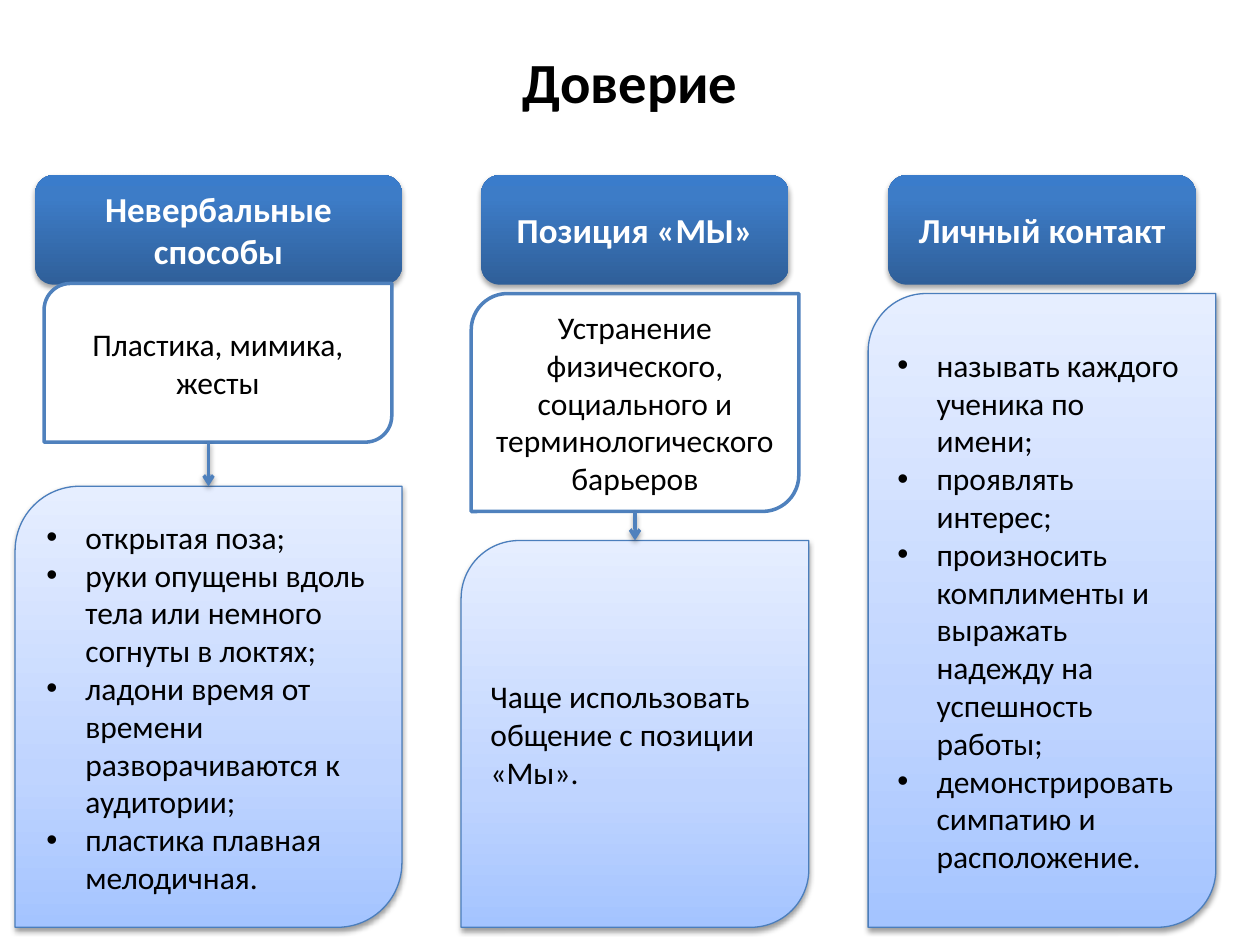
from dataclasses import dataclass

from lxml import etree
from pptx import Presentation
from pptx.dml.color import RGBColor
from pptx.enum import shapes, text
from pptx.oxml import ns
from pptx.util import Inches, Pt


@dataclass(frozen=True)
class Theme:
    font: str = "Calibri"
    title_size: float = 32.4
    header_size: float = 20
    body_size: float = 18
    ink: str = "000000"
    paper: str = "FFFFFF"
    accent: str = "4F81BD"
    panel_line: str = "4B7EBC"
    header_fill: tuple = ((0, "2F5F99"), (80, "3D7CC7"), (100, "3A7CCB"))
    panel_fill: tuple = ((0, "A4C4FF"), (35, "BFD4FF"), (100, "E6EEFF"))
    # Opacity in percent, then distance in points
    header_shadow: tuple = (35, 1.8)
    panel_shadow: tuple = (38, 1.6)


THEME = Theme()
HEADER_TOP, HEADER_HEIGHT = 1.39, 0.87
PANEL_BOTTOM = 7.36
BULLET_INDENT = 0.31

COLUMNS = [
    {
        "header": ("Невербальные способы", 0.28, 2.91),
        "summary": ("Пластика, мимика, жесты", (0.35, 2.25, 2.76, 1.26)),
        "details": [
            "открытая поза;",
            "руки опущены вдоль тела или немного согнуты в локтях;",
            "ладони время от времени разворачиваются к аудитории;",
            "пластика плавная мелодичная.",
        ],
        "panel": (0.12, 3.86, 3.07),
    },
    {
        "header": ("Позиция «МЫ»", 3.82, 2.44),
        "summary": (
            "Устранение физического, социального и терминологического барьеров",
            (3.74, 2.33, 2.6, 1.73),
        ),
        "details": ["Чаще использовать общение с позиции «Мы»."],
        "panel": (3.66, 4.29, 2.76),
    },
    {
        "header": ("Личный контакт", 7.05, 2.44),
        "details": [
            "называть каждого ученика по имени;",
            "проявлять интерес;",
            "произносить комплименты и выражать надежду на успешность работы;",
            "демонстрировать симпатию и расположение.",
        ],
        "panel": (6.89, 2.33, 2.76),
    },
]


def inches(box):
    return [Inches(length) for length in box]


def add_xml(parent, tag, **attributes):
    return etree.SubElement(parent, ns.qn(tag), attributes)


def add_shadow(effects, opacity, distance):
    shadow = add_xml(effects, "a:outerShdw", blurRad=str(Pt(3.1)), dist=str(Pt(distance)),
                     dir="5400000", rotWithShape="0")
    color = add_xml(shadow, "a:srgbClr", val=THEME.ink)
    add_xml(color, "a:alpha", val=str(opacity * 1000))


def set_gradient(fill, owner, stops):
    fill.gradient()
    fill.gradient_angle = 90
    stop_list = owner._element.spPr.find(".//" + ns.qn("a:gsLst"))
    for stop in list(stop_list):
        stop_list.remove(stop)
    for position, color in stops:
        stop = add_xml(stop_list, "a:gs", pos=str(position * 1000))
        add_xml(stop, "a:srgbClr", val=color)


def write(shape, lines, size, color, bold=False, align=text.PP_ALIGN.CENTER, bullets=False):
    frame = shape.text_frame
    frame.word_wrap = True
    frame.vertical_anchor = text.MSO_ANCHOR.MIDDLE
    font_format = {"name": THEME.font, "size": Pt(size), "bold": bold}
    for index, line in enumerate(lines):
        paragraph = frame.add_paragraph() if index else frame.paragraphs[0]
        paragraph.alignment = align
        run = paragraph.add_run()
        run.text = line
        for name, value in font_format.items():
            setattr(run.font, name, value)
        run.font.color.rgb = RGBColor.from_string(color)
        if bullets:
            properties = paragraph._p.get_or_add_pPr()
            indent = Inches(BULLET_INDENT)
            properties.set("marL", str(indent))
            properties.set("indent", str(-indent))
            add_xml(properties, "a:buFont", typeface="Arial")
            add_xml(properties, "a:buChar", char="•")


def add_card(slide, preset, box, fill, line=None, shadow=None):
    card = slide.shapes.add_shape(preset, *inches(box))
    if isinstance(fill, tuple):
        set_gradient(card.fill, card, fill)
    else:
        card.fill.solid()
        card.fill.fore_color.rgb = RGBColor.from_string(fill)
    if line:
        color, width = line
        card.line.color.rgb = RGBColor.from_string(color)
        card.line.width = Pt(width)
    else:
        card.line.fill.background()
    card.shadow.inherit = False
    if shadow:
        add_shadow(card._element.spPr.find(ns.qn("a:effectLst")), *shadow)
    return card


def add_title(slide, box):
    title = slide.shapes.add_textbox(*inches(box))
    write(title, ["Доверие"], THEME.title_size, THEME.ink, bold=True)


def add_header(slide, box, label):
    header = add_card(slide, shapes.MSO_SHAPE.ROUNDED_RECTANGLE, box,
                      THEME.header_fill, shadow=THEME.header_shadow)
    write(header, [label], THEME.header_size, THEME.paper, bold=True)


def add_summary(slide, box, label):
    summary = add_card(slide, shapes.MSO_SHAPE.ROUND_2_DIAG_RECTANGLE, box,
                       THEME.paper, (THEME.accent, 2))
    write(summary, [label], THEME.body_size, THEME.ink)


def add_panel(slide, box, details):
    panel = add_card(slide, shapes.MSO_SHAPE.ROUND_2_DIAG_RECTANGLE, box,
                     THEME.panel_fill, (THEME.panel_line, 0.75), THEME.panel_shadow)
    write(panel, details, THEME.body_size, THEME.ink,
          align=text.PP_ALIGN.LEFT, bullets=len(details) > 1)


def add_arrow(slide, x, top, bottom):
    arrow = slide.shapes.add_connector(shapes.MSO_CONNECTOR.STRAIGHT,
                                       *inches((x, top, x, bottom)))
    arrow.line.color.rgb = RGBColor.from_string(THEME.accent)
    arrow.line.width = Pt(2)
    add_xml(arrow.line._get_or_add_ln(), "a:tailEnd", type="arrow")
    add_shadow(add_xml(arrow._element.spPr, "a:effectLst"), *THEME.panel_shadow)


def add_column(slide, column):
    label, left, width = column["header"]
    add_header(slide, (left, HEADER_TOP, width, HEADER_HEIGHT), label)
    panel_left, panel_top, panel_width = column["panel"]
    add_panel(slide, (panel_left, panel_top, panel_width, PANEL_BOTTOM - panel_top),
              column["details"])
    # The arrow runs from the summary down to the panel
    if "summary" in column:
        label, box = column["summary"]
        add_summary(slide, box, label)
        add_arrow(slide, panel_left + panel_width / 2, box[1] + box[3], panel_top)


def main():
    deck = Presentation()
    deck.slide_width, deck.slide_height = inches((10, 7.5))
    slide = deck.slides.add_slide(deck.slide_layouts[6])
    add_title(slide, (0.5, 0.3, 9, 0.69))
    for column in COLUMNS:
        add_column(slide, column)
    deck.save("out.pptx")


if __name__ == "__main__":
    main()
